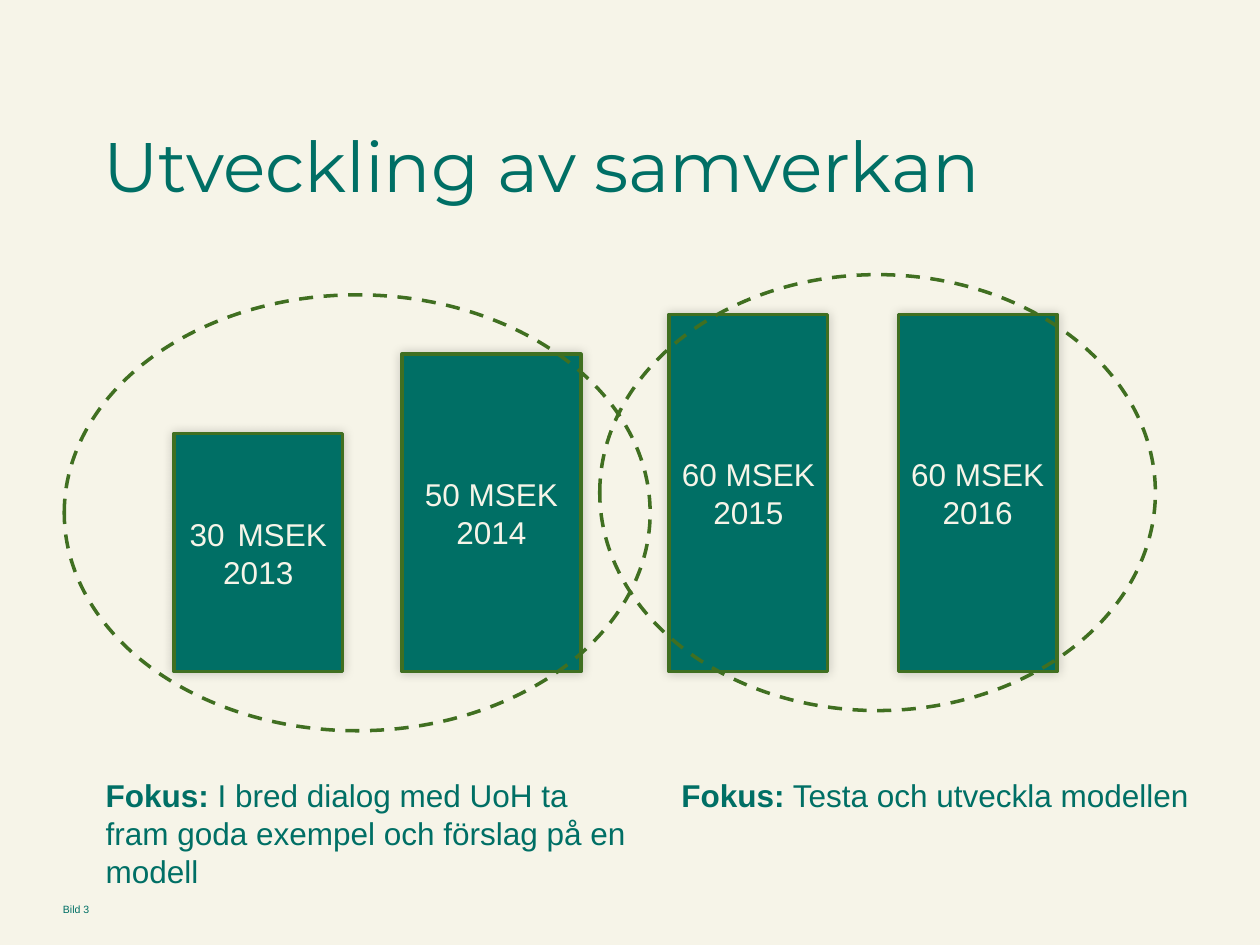
from lxml import etree
from pptx import Presentation
from pptx.dml.color import RGBColor
from pptx.enum import dml, shapes, text
from pptx.oxml import ns
from pptx.util import Inches, Pt

# Content
TITLE = "Utveckling av samverkan"
PAGE = "Bild 3"
# left, width, MSEK, year
BARS = [
    (1.38, 1.34, 30, "2013"),
    (3.19, 1.42, 50, "2014"),
    (5.31, 1.26, 60, "2015"),
    (7.13, 1.26, 60, "2016"),
]
RINGS = [(4.76, 2.18, 4.41), (0.51, 2.34, 4.65)]  # left, top, width
# left, width, height, wrap, body
NOTES = [
    (0.74, 4.41, 1.01, True,
     " I bred dialog med UoH ta fram goda exempel och förslag på en modell"),
    (5.31, 4.27, 0.4, False, " Testa och utveckla modellen"),
]

THEME = {
    "back": RGBColor.from_string("F6F4E8"),
    "main": RGBColor.from_string("006F65"),
    "edge": RGBColor.from_string("406F21"),
    "head": "Montserrat", "body": "Arial",
    "title": 40, "text": 18, "page": 6, "line": 2,
}
BASE, RING_H, NOTE_TOP = 5.33, 3.46, 6.11


def box(*vals):
    return [Inches(v) for v in vals]


def style(font, size, color="main", face="body", bold=False):
    font.name, font.size, font.bold = THEME[face], Pt(THEME[size]), bold
    font.color.rgb = THEME[color]


def outline(shape):
    shape.line.color.rgb = THEME["edge"]
    shape.line.width = Pt(THEME["line"])


def sub(parent, tag, **attrs):
    return etree.SubElement(parent, ns.qn(tag), attrs)


def glow(shape):
    fx = shape._element.spPr.find(ns.qn("a:effectLst"))
    shade = sub(fx, "a:outerShdw", blurRad=str(Pt(6)), dist="0",
                dir="13500000", algn="ctr", rotWithShape="0")
    sub(sub(shade, "a:srgbClr", val="000000"), "a:alpha", val="20000")


def number(para, start):
    props = para._p.get_or_add_pPr()
    props.set("marL", str(Inches(0.38)))
    props.set("indent", str(Inches(-0.38)))
    sub(props, "a:buFont", typeface="+mj-lt")
    sub(props, "a:buAutoNum", type="arabicPlain", startAt=str(start))


prs = Presentation()
prs.slide_width, prs.slide_height = box(10, 7.5)
slide = prs.slides.add_slide(prs.slide_layouts[5])
slide.background.fill.solid()
slide.background.fill.fore_color.rgb = THEME["back"]

# Title
title = slide.shapes.title
title.left, title.top, title.width, title.height = box(0.72, 0.36, 8.44, 1.34)
frame = title.text_frame
frame.text = TITLE
frame.auto_size = text.MSO_AUTO_SIZE.NONE
frame.vertical_anchor = text.MSO_ANCHOR.BOTTOM
para = frame.paragraphs[0]
para.alignment, para.line_spacing = text.PP_ALIGN.LEFT, 0.9
style(para.runs[0].font, "title", face="head")

# Page label
frame = slide.shapes.add_textbox(*box(0.5, 7.17, 0.33, 0.09)).text_frame
frame.margin_left = frame.margin_right = 0
frame.margin_top = frame.margin_bottom = 0
frame.vertical_anchor = text.MSO_ANCHOR.MIDDLE
frame.text = PAGE
style(frame.paragraphs[0].runs[0].font, "page")

# Bars share a baseline and grow in step with the sum
for left, width, sum_, year in BARS:
    tall = 0.945 + 0.0315 * sum_
    bar = slide.shapes.add_shape(shapes.MSO_SHAPE.RECTANGLE,
                                 *box(left, BASE - tall, width, tall))
    bar.shadow.inherit = False
    bar.fill.solid()
    bar.fill.fore_color.rgb = THEME["main"]
    outline(bar)
    glow(bar)
    frame = bar.text_frame
    frame.vertical_anchor = text.MSO_ANCHOR.MIDDLE
    first = sum_ == BARS[0][2]  # the first sum is an automatic number
    frame.text = f"MSEK\n{year}" if first else f"{sum_} MSEK\n{year}"
    if first:
        number(frame.paragraphs[0], sum_)
    for para in frame.paragraphs:
        para.alignment = text.PP_ALIGN.CENTER
        style(para.runs[0].font, "text", "back")

# Dashed rings around the two phases
for left, top, width in RINGS:
    ring = slide.shapes.add_shape(shapes.MSO_SHAPE.OVAL,
                                  *box(left, top, width, RING_H))
    ring.shadow.inherit = False
    ring.fill.background()
    outline(ring)
    ring.line.dash_style = dml.MSO_LINE.DASH

# Focus notes
for left, width, tall, wrap, body in NOTES:
    note = slide.shapes.add_textbox(*box(left, NOTE_TOP, width, tall))
    frame = note.text_frame
    frame.word_wrap = wrap
    frame.auto_size = text.MSO_AUTO_SIZE.SHAPE_TO_FIT_TEXT
    para = frame.paragraphs[0]
    for words, bold in (("Fokus:", True), (body, False)):
        run = para.add_run()
        run.text = words
        style(run.font, "text", bold=bold)

prs.save("out.pptx")
